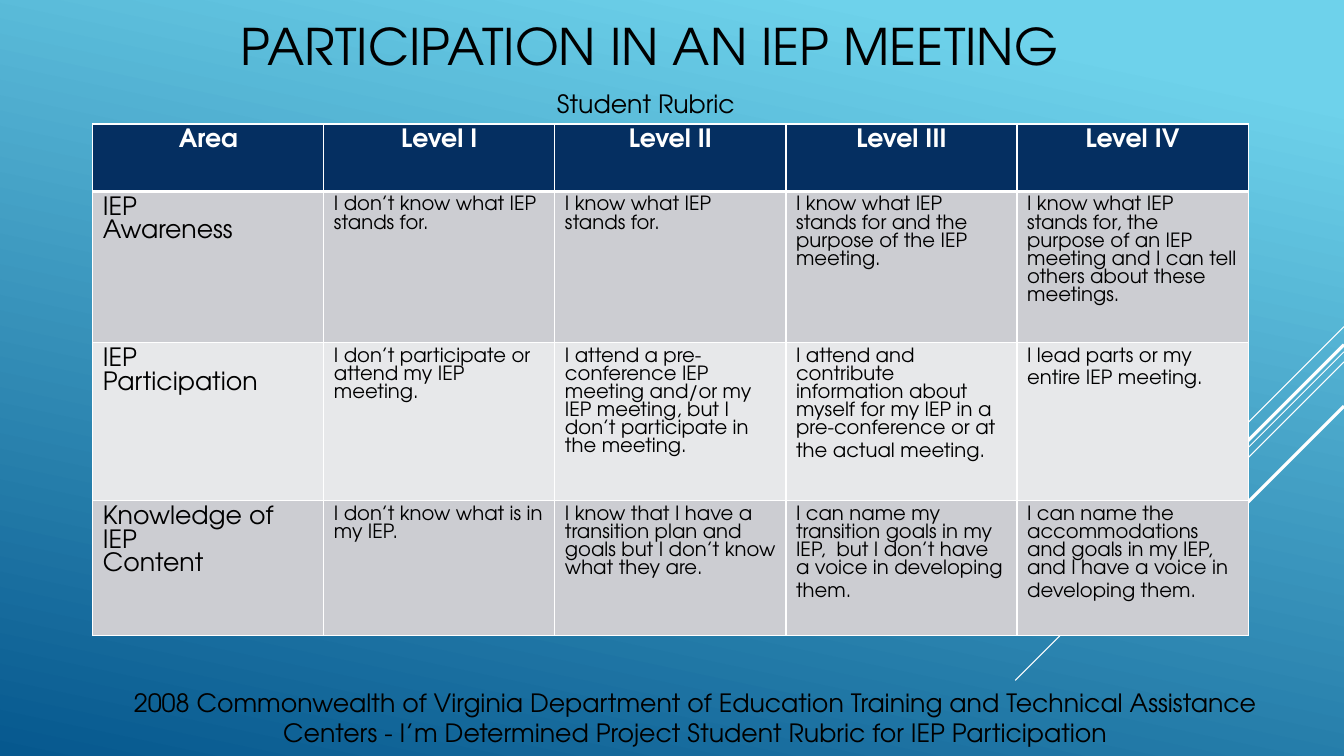
from dataclasses import dataclass

from lxml.etree import SubElement
from pptx import Presentation
from pptx.dml.color import RGBColor
from pptx.enum.shapes import MSO_CONNECTOR
from pptx.enum.text import MSO_ANCHOR, PP_ALIGN
from pptx.oxml.ns import qn
from pptx.util import Inches, Pt


@dataclass(frozen=True)
class Theme:
    font: str = "TeX Gyre Adventor"
    ink: str = "000000"
    white: str = "FFFFFF"
    header: str = "052F61"
    bands: tuple = ("CCCDD2", "E7E8EA")
    sky: tuple = ((0.1, "6ED2EB"), (1.0, "06588E"))
    sky_angle: int = 258
    title_size: int = 36
    label_size: int = 18
    body_size: int = 14
    thin: float = 0.75
    thick: float = 2.25
    grid: float = 1
    header_rule: float = 3


THEME = Theme()
WIDTH, HEIGHT = 13.33, 7.5

STREAKS = [
    (3.24, 1.0, THEME.thin),
    (3.49, 3.26, THEME.thin),
    (3.59, 2.07, THEME.thin),
    (3.42, 1.91, THEME.thick),
    (4.03, 1.39, THEME.thick),
]

LEVELS = ["Area", "Level I", "Level II", "Level III", "Level IV"]
ROW_HEIGHTS = [0.67, 1.26, 1.52, 1.32]
AREAS = [
    (["IEP", "Awareness"], [
        "I don’t know what IEP stands for.",
        "I know what IEP stands for.",
        "I know what IEP stands for and the purpose of the IEP meeting.",
        "I know what IEP stands for, the purpose of an IEP meeting and I can tell "
        "others about these meetings.",
    ]),
    (["IEP", "Participation"], [
        "I don’t participate or attend my IEP meeting.",
        "I attend a pre-conference IEP meeting and/or my IEP meeting, but I don’t "
        "participate in the meeting.",
        "I attend and contribute information about myself for my IEP in a "
        "pre-conference or at the actual meeting.\t",
        "I lead parts or my entire IEP meeting.\t",
    ]),
    (["Knowledge of IEP", "Content"], [
        "I don’t know what is in my IEP.",
        "I know that I have a transition plan and goals but I don’t know what they are.",
        "I can name my transition goals in my IEP,  but I don’t have a voice in "
        "developing them.\t",
        "I can name the accommodations and goals in my IEP, and I have a voice in "
        "developing them.\t",
    ]),
]


def apply_format(target, values):
    for name, value in values.items():
        setattr(target, name, value)


def add_run(paragraph, text, size, color=THEME.ink, bold=False):
    run = paragraph.add_run()
    run.text = text
    apply_format(run.font, {"name": THEME.font, "size": Pt(size), "bold": bold})
    run.font.color.rgb = RGBColor.from_string(color)


def paint_sky(slide):
    fill = slide.background.fill
    fill.gradient()
    fill.gradient_angle = THEME.sky_angle
    for stop, (position, color) in zip(fill.gradient_stops, THEME.sky):
        stop.position = position
        stop.color.rgb = RGBColor.from_string(color)


def add_streaks(slide, right):
    streaks = slide.shapes.add_group_shape().shapes
    for top, run, weight in STREAKS:
        streak = streaks.add_connector(
            MSO_CONNECTOR.STRAIGHT,
            Inches(right), Inches(top), Inches(right - run), Inches(top + run))
        streak.line.width = Pt(weight)
        streak.line.color.rgb = RGBColor.from_string(THEME.white)
        SubElement(streak._element.spPr, qn("a:effectLst"))


def add_caption(slide, box, text, size, anchor=MSO_ANCHOR.TOP):
    frame = slide.shapes.add_textbox(*map(Inches, box)).text_frame
    apply_format(frame, {"word_wrap": True, "vertical_anchor": anchor})
    caption = frame.paragraphs[0]
    caption.alignment = PP_ALIGN.CENTER
    add_run(caption, text, size)


def style_cell(cell, color, bottom=THEME.grid, top=THEME.grid):
    properties = cell._tc.get_or_add_tcPr()
    edges = {"lnL": THEME.grid, "lnR": THEME.grid, "lnT": top, "lnB": bottom}
    for edge, weight in edges.items():
        line = SubElement(properties, qn(f"a:{edge}"), w=str(Pt(weight)))
        SubElement(SubElement(line, qn("a:solidFill")), qn("a:srgbClr"), val=THEME.white)
    cell.fill.solid()
    cell.fill.fore_color.rgb = RGBColor.from_string(color)


def write_cell(cell, lines, size, color=THEME.ink, bold=False, align=PP_ALIGN.LEFT):
    frame = cell.text_frame
    for index, line in enumerate(lines):
        paragraph = frame.add_paragraph() if index else frame.paragraphs[0]
        paragraph.alignment = align
        wording = line.rstrip("\t")
        add_run(paragraph, wording, size, color, bold)
        if wording != line:
            add_run(paragraph, "\t", THEME.label_size, color)


def add_rubric(slide, left, top, width):
    rubric = slide.shapes.add_table(
        len(ROW_HEIGHTS), len(LEVELS), Inches(left), Inches(top),
        Inches(width), Inches(sum(ROW_HEIGHTS))).table
    rubric.horz_banding = False
    for column in rubric.columns:
        column.width = Inches(width / len(LEVELS))
    for row, height in zip(rubric.rows, ROW_HEIGHTS):
        row.height = Inches(height)

    for column, level in enumerate(LEVELS):
        heading = rubric.cell(0, column)
        style_cell(heading, THEME.header, bottom=THEME.header_rule)
        write_cell(heading, [level], THEME.label_size, THEME.white, True, PP_ALIGN.CENTER)

    for row, (area, descriptions) in enumerate(AREAS, start=1):
        band = THEME.bands[(row - 1) % len(THEME.bands)]
        upper = THEME.header_rule if row == 1 else THEME.grid
        for column, lines in enumerate([area] + [[text] for text in descriptions]):
            cell = rubric.cell(row, column)
            style_cell(cell, band, top=upper)
            write_cell(cell, lines, THEME.body_size if column else THEME.label_size)


def build_rubric_slide(presentation):
    slide = presentation.slides.add_slide(presentation.slide_layouts[6])
    paint_sky(slide)
    add_streaks(slide, WIDTH)
    add_caption(slide, (1.78, 0.07, 9.33, 0.75), "PARTICIPATION IN AN IEP MEETING",
                THEME.title_size, MSO_ANCHOR.MIDDLE)
    add_rubric(slide, 0.92, 1.23, 11.46)
    add_caption(slide, (2.67, 0.83, 7.54, 0.4), "Student Rubric ", THEME.label_size)
    add_caption(slide, (0.85, 6.77, 12.09, 0.71),
                "2008 Commonwealth of Virginia Department of Education Training and "
                "Technical Assistance Centers - I’m Determined Project Student Rubric "
                "for IEP Participation", THEME.label_size)


def main():
    presentation = Presentation()
    apply_format(presentation, {"slide_width": Inches(WIDTH), "slide_height": Inches(HEIGHT)})
    build_rubric_slide(presentation)
    presentation.save("out.pptx")


if __name__ == "__main__":
    main()
